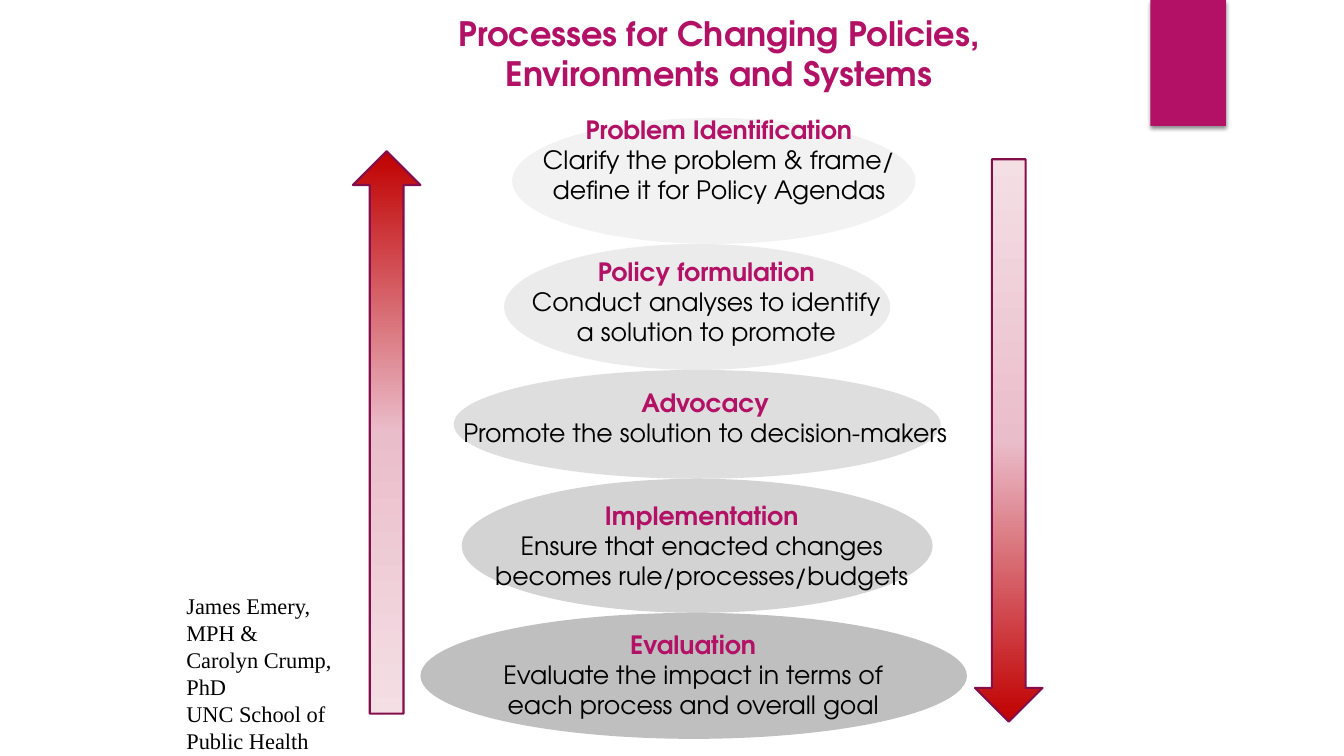
import copy
from dataclasses import dataclass

import pptx
import pptx.dml.color
import pptx.enum.shapes
import pptx.enum.text
import pptx.oxml
import pptx.oxml.ns
import pptx.util
from pptx.util import Inches

SHAPES = pptx.enum.shapes.MSO_SHAPE
ALIGN = pptx.enum.text.PP_ALIGN
MAGENTA = "B31166"
BLACK = "000000"
SANS = "TeX Gyre Adventor"
SERIF = "Times New Roman"
ARROW_STOPS = [(0, "C00000"), (0.5, "EABDCA"), (1, "F4DFE5")]

Box = tuple[float, float, float, float]  # left, top, width, height in inches


@dataclass
class Line:
    text: str
    size: int
    color: str
    font: str = SANS
    bold: bool = False


@dataclass
class Step:
    heading: str
    detail: str
    ellipse: Box
    fill: str
    opacity: int
    text_box: Box


@dataclass
class Arrow:
    box: Box
    rotation: int


# From the bottom of the stack to the top
STEPS = [
    Step("Evaluation", "Evaluate the impact in terms of each process and overall goal",
         (4.17, 6.08, 5.42, 1.25), "808080", 50, (4.75, 6.19, 4.25, 1.31)),
    Step("Implementation", "Ensure that enacted changes becomes rule/processes/budgets",
         (4.58, 4.75, 4.67, 1.33), "A6A6A6", 49, (4.5, 4.91, 4.92, 1.01)),
    Step("Advocacy", "Promote the solution to decision-makers",
         (4.5, 3.67, 4.83, 1.08), "BFBFBF", 50, (4.33, 3.79, 5.33, 0.71)),
    Step("Policy formulation", "Conduct analyses to identify a solution to promote",
         (5, 2.42, 3.83, 1.25), "D9D9D9", 50, (5.17, 2.49, 3.67, 1.31)),
    Step("Problem Identification", "Clarify the problem & frame/ define it for Policy Agendas",
         (5.08, 1.17, 4, 1.25), "F2F2F2", 100, (5.17, 1.08, 3.92, 1.01)),
]
ARROWS = [Arrow((3.5, 1.5, 0.67, 5.58), 0), Arrow((9.67, 1.58, 0.67, 5.58), 180)]


def rgb(value: str) -> pptx.dml.color.RGBColor:
    return pptx.dml.color.RGBColor.from_string(value)


def add_plain_shape(slide, kind: SHAPES, box: Box):
    shape = slide.shapes.add_shape(kind, *map(Inches, box))
    shape.shadow.inherit = False
    return shape


def add_filled_shape(slide, kind: SHAPES, box: Box, fill: str, opacity: int = 100):
    shape = add_plain_shape(slide, kind, box)
    shape.fill.solid()
    shape.fill.fore_color.rgb = rgb(fill)
    shape.line.fill.background()
    if opacity < 100:
        color = shape.fill._xPr.find(".//" + pptx.oxml.ns.qn("a:srgbClr"))
        alpha = pptx.oxml.parse_xml(
            f'<a:alpha {pptx.oxml.ns.nsdecls("a")} val="{opacity * 1000}"/>')
        color.append(alpha)
    return shape


def add_drop_shadow(shape) -> None:
    effects = shape._element.spPr.find(pptx.oxml.ns.qn("a:effectLst"))
    effects.append(pptx.oxml.parse_xml(
        f'<a:outerShdw {pptx.oxml.ns.nsdecls("a")} blurRad="{pptx.util.Pt(3)}" '
        f'dist="{pptx.util.Pt(2)}" dir="5400000" rotWithShape="0">'
        '<a:srgbClr val="000000"><a:alpha val="45000"/></a:srgbClr></a:outerShdw>'))


def add_arrow(slide, arrow: Arrow) -> None:
    shape = add_plain_shape(slide, SHAPES.UP_ARROW, arrow.box)
    shape.rotation = arrow.rotation
    shape.line.color.rgb = rgb("840D4B")
    shape.line.width = pptx.util.Pt(1.5)
    shape.fill.gradient()
    shape.fill.gradient_angle = 270
    stop_list = shape._element.spPr.find(".//" + pptx.oxml.ns.qn("a:gsLst"))
    stop_list.append(copy.deepcopy(stop_list[0]))
    for stop, (position, color) in zip(shape.fill.gradient_stops, ARROW_STOPS):
        stop.position = position
        stop.color.rgb = rgb(color)


def add_text(slide, box: Box, lines: list[Line], alignment: ALIGN = ALIGN.CENTER) -> None:
    text_frame = slide.shapes.add_textbox(*map(Inches, box)).text_frame
    text_frame.word_wrap = True
    text_frame.auto_size = pptx.enum.text.MSO_AUTO_SIZE.SHAPE_TO_FIT_TEXT
    text_frame.text = "\n".join(line.text for line in lines)
    for paragraph, line in zip(text_frame.paragraphs, lines):
        paragraph.alignment = alignment
        font = paragraph.runs[0].font
        font.name = line.font
        font.size = pptx.util.Pt(line.size)
        font.bold = line.bold
        font.color.rgb = rgb(line.color)


def main() -> None:
    presentation = pptx.Presentation()
    presentation.slide_width = Inches(13.33)
    presentation.slide_height = Inches(7.5)
    slide = presentation.slides.add_slide(presentation.slide_layouts[6])

    corner_tab = add_filled_shape(slide, SHAPES.RECTANGLE, (11.41, 0, 0.75, 1.25), MAGENTA)
    add_drop_shadow(corner_tab)

    for step in STEPS:
        add_filled_shape(slide, SHAPES.OVAL, step.ellipse, step.fill, step.opacity)
        add_text(slide, step.text_box, [
            Line(step.heading, 18, MAGENTA, bold=True),
            Line(step.detail, 18, BLACK),
        ])

    for arrow in ARROWS:
        add_arrow(slide, arrow)

    add_text(slide, (1.75, 5.83, 1.67, 1.45), [
        Line("James Emery, MPH & Carolyn Crump, PhD", 16, BLACK, SERIF),
        Line("UNC School of Public Health", 16, BLACK, SERIF),
    ], ALIGN.LEFT)
    add_text(slide, (4.17, 0.08, 5.92, 0.91), [
        Line("Processes for Changing Policies, Environments and Systems", 24, MAGENTA, bold=True),
    ])

    presentation.save("out.pptx")


if __name__ == "__main__":
    main()
